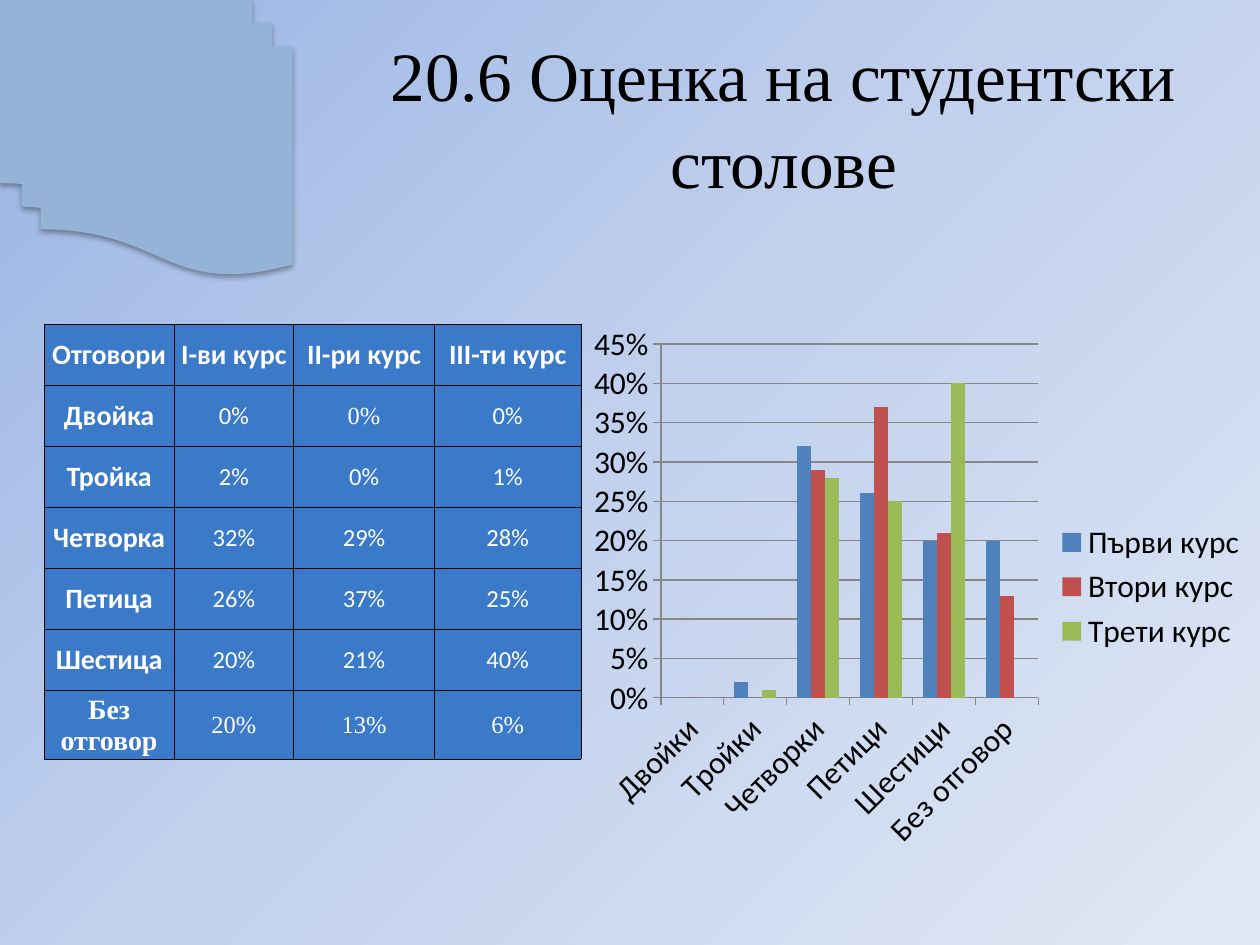
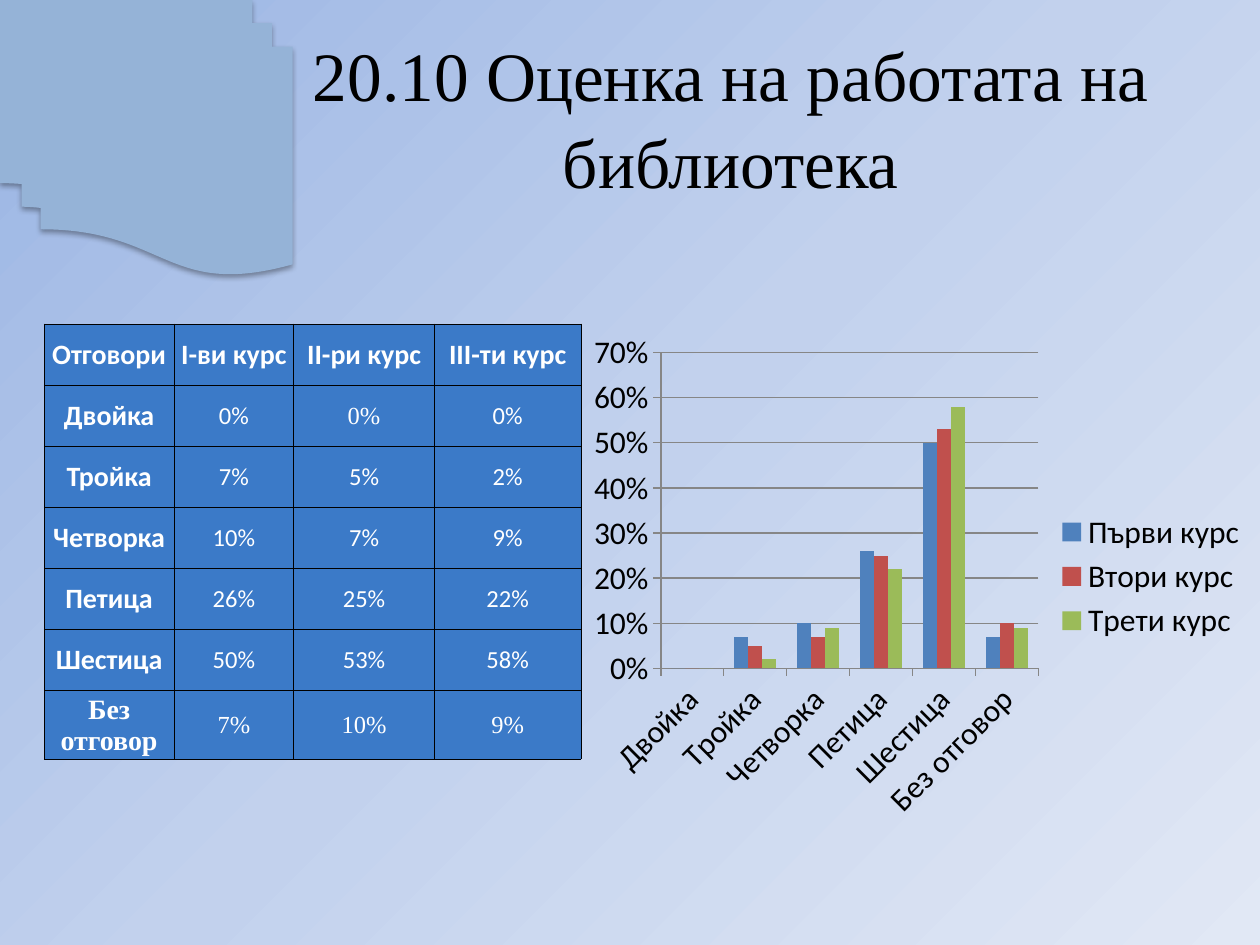
"""Build two survey slides, each pairing a table of grades with a column chart."""
from dataclasses import dataclass

from pptx import Presentation
from pptx.chart.data import CategoryChartData
from pptx.dml.color import RGBColor
from pptx.enum.chart import XL_CHART_TYPE, XL_LEGEND_POSITION, XL_TICK_MARK
from pptx.enum.shapes import MSO_SHAPE
from pptx.enum.text import MSO_ANCHOR, PP_ALIGN
from pptx.oxml import parse_xml
from pptx.oxml.ns import nsdecls
from pptx.util import Cm, Pt

COLOURS = {
    "sky_start": "9AB5E4", "sky_middle": "C2D1ED", "sky_end": "E1E8F5",
    "ornament": "95B3D7", "cell": "3B7AC8", "ink": "000000", "cell_text": "FFFFFF",
    "grid": "868686", "first": "4F81BD", "second": "C0504D", "third": "9BBB59",
}
BODY_FONT, SERIF_FONT = "Calibri", "Times New Roman"
HEADINGS = ("Отговори", "I-ви курс", "II-ри курс", "III-ти курс")
ANSWERS = ("Двойка", "Тройка", "Четворка", "Петица", "Шестица", "Без отговор")
PLURAL_ANSWERS = ("Двойки", "Тройки", "Четворки", "Петици", "Шестици", "Без отговор")
YEARS = {"Първи курс": "first", "Втори курс": "second", "Трети курс": "third"}
COLUMN_WIDTHS = (2.62, 2.41, 2.84, 2.95)
ROW_HEIGHT = 1.23
CELL_MARGIN = 0.03


@dataclass(frozen=True)
class Box:
    """Position and size in centimetres."""
    left: float
    top: float
    width: float
    height: float

    def lengths(self) -> tuple:
        """Return the four values as lengths."""
        return Cm(self.left), Cm(self.top), Cm(self.width), Cm(self.height)


@dataclass(frozen=True)
class Survey:
    """One question with the percentages of each answer by year of study."""
    question: str
    question_box: Box
    chart_box: Box
    categories: tuple
    percentages: tuple
    uncharted: tuple = ()


SURVEYS = (
    Survey("20.6 Оценка на студентски столове",
           Box(6.2, 0.74, 19.2, 3.18), Box(11.7, 6.33, 13.7, 11), PLURAL_ANSWERS,
           ((0, 0, 0), (2, 0, 1), (32, 29, 28), (26, 37, 25), (20, 21, 40), (20, 13, 6)),
           uncharted=(("Без отговор", "Трети курс"),)),
    Survey("20.10 Оценка на работата на библиотека",
           Box(3.3, 0.74, 22.86, 3.18), Box(11.7, 6.52, 13.7, 10.2), ANSWERS,
           ((0, 0, 0), (7, 5, 2), (10, 7, 9), (26, 25, 22), (50, 53, 58), (7, 10, 9))),
)


def rgb(name: str) -> RGBColor:
    """Look up a named colour."""
    return RGBColor.from_string(COLOURS[name])


def write(frame, text: str, *, size: float, font: str = BODY_FONT, colour: str = "ink",
          bold: bool = False, spacing: float = 1.0) -> None:
    """Write one centred paragraph with the given format."""
    paragraph = frame.paragraphs[0]
    paragraph.alignment = PP_ALIGN.CENTER
    paragraph.line_spacing = spacing
    run = paragraph.add_run()
    run.text = text
    run.font.size = Pt(size)
    run.font.name = font
    run.font.bold = bold
    run.font.color.rgb = rgb(colour)


def paint_background(slide) -> None:
    """Give the slide its diagonal gradient."""
    stops = "".join(
        f'<a:gs pos="{position}"><a:srgbClr val="{COLOURS[name]}"/></a:gs>'
        for position, name in ((0, "sky_start"), (50000, "sky_middle"), (100000, "sky_end")))
    slide.element.cSld.insert(0, parse_xml(
        f'<p:bg {nsdecls("p", "a")}><p:bgPr><a:gradFill rotWithShape="1">'
        f'<a:gsLst>{stops}</a:gsLst><a:lin ang="2700000" scaled="0"/></a:gradFill>'
        '<a:effectLst/></p:bgPr></p:bg>'))


def draw_ornament(slide) -> None:
    """Draw the mirrored stack of sheets in the corner."""
    sheets = slide.shapes.add_shape(
        MSO_SHAPE.FLOWCHART_MULTIDOCUMENT, *Box(0, 0, 5.9, 5.54).lengths())
    sheets.fill.solid()
    sheets.fill.fore_color.rgb = rgb("ornament")
    sheets.line.fill.background()
    properties = sheets.element.spPr
    properties.xfrm.set("flipH", "1")
    properties.append(parse_xml(
        f'<a:effectLst {nsdecls("a")}><a:outerShdw blurRad="{Pt(3.1)}" dist="{Pt(1.8)}" '
        f'dir="5400000" rotWithShape="0"><a:srgbClr val="{COLOURS["ink"]}">'
        '<a:alpha val="35000"/></a:srgbClr></a:outerShdw></a:effectLst>'))


def draw_question(slide, survey: Survey) -> None:
    """Place the question as the slide title."""
    frame = slide.shapes.add_textbox(*survey.question_box.lengths()).text_frame
    frame.word_wrap = True
    frame.vertical_anchor = MSO_ANCHOR.MIDDLE
    write(frame, survey.question, size=39.6, font=SERIF_FONT, spacing=1.04)


def style_cell(cell) -> None:
    """Set the margins, borders and fill of a table cell."""
    cell.margin_left = cell.margin_right = cell.margin_top = Cm(CELL_MARGIN)
    cell.margin_bottom = 0
    cell.vertical_anchor = MSO_ANCHOR.MIDDLE
    properties = cell._tc.get_or_add_tcPr()
    for side in "LRTB":
        properties.append(parse_xml(
            f'<a:ln{side} {nsdecls("a")} w="{Pt(0.25)}"><a:solidFill>'
            f'<a:srgbClr val="{COLOURS["ink"]}"/></a:solidFill></a:ln{side}>'))
    cell.fill.solid()
    cell.fill.fore_color.rgb = rgb("cell")


def draw_table(slide, survey: Survey) -> None:
    """Tabulate the percentages by answer and year."""
    rows = [HEADINGS] + [
        (answer, *(f"{share}%" for share in shares))
        for answer, shares in zip(ANSWERS, survey.percentages)]
    area = Box(0.89, 6.53, sum(COLUMN_WIDTHS), ROW_HEIGHT * len(rows))
    table = slide.shapes.add_table(len(rows), len(HEADINGS), *area.lengths()).table
    for column, width in zip(table.columns, COLUMN_WIDTHS):
        column.width = Cm(width)
    for r, row in enumerate(rows):
        table.rows[r].height = Cm(ROW_HEIGHT)
        for c, text in enumerate(row):
            label = r == 0 or c == 0
            serif = r == len(rows) - 1 or (r, c) == (1, 2)
            cell = table.cell(r, c)
            style_cell(cell)
            write(cell.text_frame, text, size=16 if label else 14, bold=label,
                  font=SERIF_FONT if serif else BODY_FONT, colour="cell_text")


def draw_chart(slide, survey: Survey) -> None:
    """Chart the percentages as clustered columns."""
    grades = CategoryChartData(number_format="0%")
    grades.categories = survey.categories
    for year, shares in zip(YEARS, zip(*survey.percentages)):
        grades.add_series(year, [
            0 if (answer, year) in survey.uncharted else share / 100
            for answer, share in zip(ANSWERS, shares)])
    chart = slide.shapes.add_chart(
        XL_CHART_TYPE.COLUMN_CLUSTERED, *survey.chart_box.lengths(), grades).chart
    chart.has_title = False
    chart.font.size = Pt(18)
    chart.font.name = BODY_FONT
    chart.font.color.rgb = rgb("ink")
    chart.has_legend = True
    chart.legend.position = XL_LEGEND_POSITION.RIGHT
    chart.legend.include_in_layout = False
    plot = chart.plots[0]
    plot.gap_width = 150
    plot.vary_by_categories = False
    for series, colour in zip(plot.series, YEARS.values()):
        series.format.fill.solid()
        series.format.fill.fore_color.rgb = rgb(colour)
    for axis in (chart.category_axis, chart.value_axis):
        axis.major_tick_mark = XL_TICK_MARK.OUTSIDE
        axis.minor_tick_mark = XL_TICK_MARK.NONE
        axis.format.line.color.rgb = rgb("grid")
    shares_axis = chart.value_axis
    shares_axis.has_major_gridlines = True
    shares_axis.major_gridlines.format.line.color.rgb = rgb("grid")
    shares_axis.tick_labels.number_format = "0%"
    shares_axis.tick_labels.number_format_is_linked = False


def main() -> None:
    """Build and save the presentation."""
    presentation = Presentation()
    presentation.slide_width, presentation.slide_height = Cm(25.4), Cm(19.05)
    for survey in SURVEYS:
        slide = presentation.slides.add_slide(presentation.slide_layouts[6])
        paint_background(slide)
        draw_ornament(slide)
        draw_question(slide, survey)
        draw_table(slide, survey)
        draw_chart(slide, survey)
    presentation.save("out.pptx")


if __name__ == "__main__":
    main()
